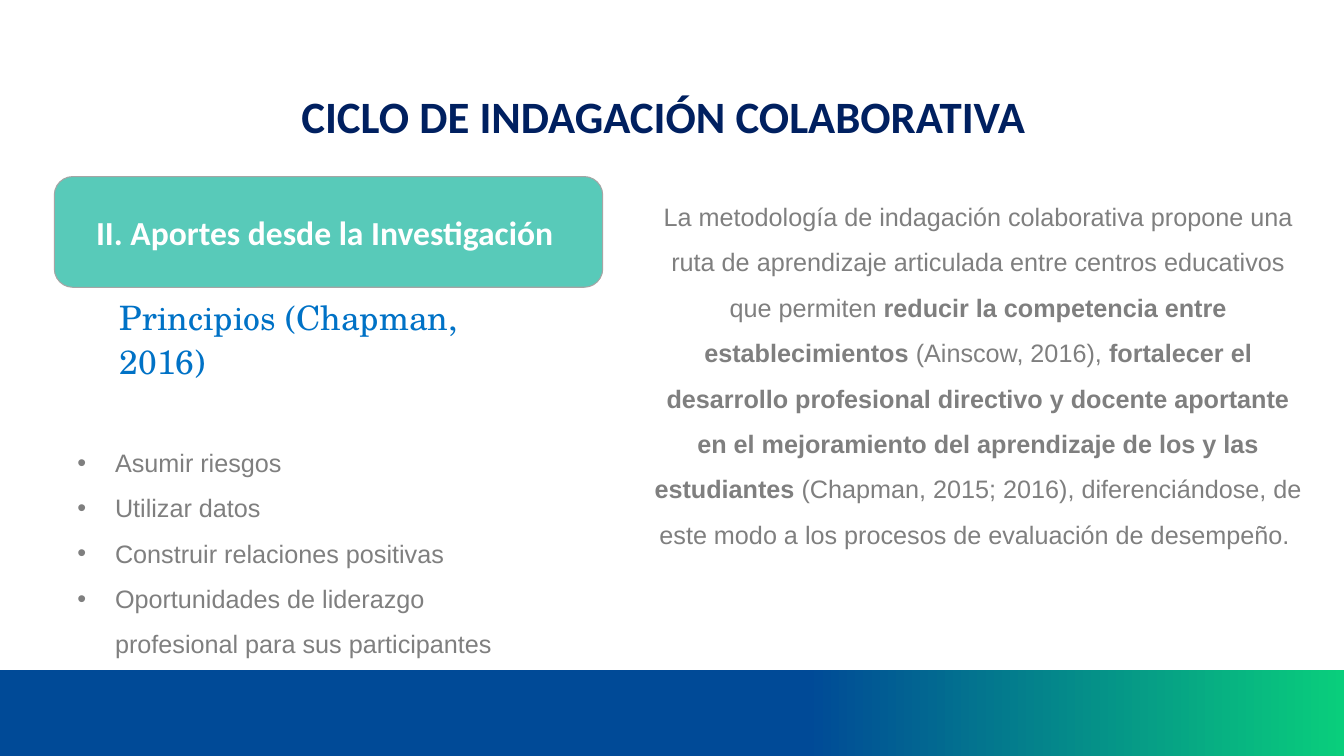
import pptx
import pptx.dml.color
import pptx.enum.shapes
import pptx.enum.text
import pptx.util
from lxml import etree
from pptx.util import Cm, Pt

COLORS = {
    "band_blue": "004A97",
    "band_green": "09CE7C",
    "banner": "58CAB9",
    "banner_line": "A5A5A5",
    "white": "FFFFFF",
    "navy": "002060",
    "sky": "0072C6",
    "gray": "7F7F7F",
}
ALIGN = pptx.enum.text.PP_ALIGN
ANCHOR = pptx.enum.text.MSO_ANCHOR
SHAPE = pptx.enum.shapes.MSO_SHAPE

TITLE_FONT = {"name": "Calibri", "size": Pt(32), "bold": True}
BANNER_FONT = {"name": "Calibri", "size": Pt(24), "bold": True}
HEADING_FONT = {"name": "TeX Gyre Schola", "size": Pt(24)}
BODY_FONT = {"name": "Arial", "size": Pt(18)}

PRINCIPLES = [
    "Asumir riesgos",
    "Utilizar datos",
    "Construir relaciones positivas",
    "Oportunidades de liderazgo profesional para sus participantes",
]
METHODOLOGY = [
    ("La metodología de indagación colaborativa propone una ruta de aprendizaje "
     "articulada entre centros educativos que permiten ", False),
    ("reducir la competencia entre establecimientos ", True),
    ("(Ainscow, 2016), ", False),
    ("fortalecer el desarrollo profesional directivo y docente aportante en el "
     "mejoramiento del aprendizaje de los y las estudiantes ", True),
    ("(Chapman, 2015; 2016), diferenciándose, de este modo a los procesos de "
     "evaluación de desempeño. ", False),
]


def rgb(color):
    return pptx.dml.color.RGBColor.from_string(COLORS[color])


def apply_format(target, values):
    for attribute, value in values.items():
        setattr(target, attribute, value)


def add_text(paragraph, text, font, color):
    run = paragraph.add_run()
    run.text = text
    apply_format(run.font, font)
    run.font.color.rgb = rgb(color)


def set_indent(paragraph, left, first=0, bullet=None):
    properties = paragraph._p.get_or_add_pPr()
    properties.set("marL", str(int(left)))
    properties.set("indent", str(int(first)))
    if bullet:
        tag = pptx.oxml.ns.qn
        etree.SubElement(properties, tag("a:buFont")).set("typeface", "Arial")
        etree.SubElement(properties, tag("a:buChar")).set("char", bullet)


def add_footer_band(slide, left, top, width, height):
    band = slide.shapes.add_shape(SHAPE.RECTANGLE, left, top, width, height)
    band.shadow.inherit = False
    band.line.fill.background()
    band.fill.gradient()
    band.fill.gradient_angle = 0
    stops = [("band_blue", 0.6), ("band_green", 1.0)]
    for stop, (color, position) in zip(band.fill.gradient_stops, stops):
        stop.color.rgb = rgb(color)
        stop.position = position


def place_title(slide, left, top, width, height):
    title = slide.shapes.title
    apply_format(title, {"left": left, "top": top, "width": width, "height": height})
    apply_format(title.text_frame, {
        "word_wrap": True,
        "vertical_anchor": ANCHOR.MIDDLE,
        "auto_size": pptx.enum.text.MSO_AUTO_SIZE.NONE,
    })
    paragraph = title.text_frame.paragraphs[0]
    paragraph.alignment = ALIGN.LEFT
    add_text(paragraph, "CICLO DE INDAGACIÓN COLABORATIVA", TITLE_FONT, "navy")


def add_banner(slide, left, top, width, height):
    banner = slide.shapes.add_shape(SHAPE.ROUNDED_RECTANGLE, left, top, width, height)
    banner.shadow.inherit = False
    banner.fill.solid()
    banner.fill.fore_color.rgb = rgb("banner")
    banner.line.color.rgb = rgb("banner_line")
    banner.line.width = Pt(0.75)
    banner.text_frame.vertical_anchor = ANCHOR.MIDDLE
    paragraph = banner.text_frame.paragraphs[0]
    paragraph.alignment = ALIGN.CENTER
    add_text(paragraph, "II. Aportes desde la Investigación ", BANNER_FONT, "white")


def add_principles(slide, left, top, width, height):
    frame = slide.shapes.add_textbox(left, top, width, height).text_frame
    apply_format(frame, {"word_wrap": True, "margin_right": Cm(2.1)})
    heading = frame.paragraphs[0]
    set_indent(heading, Cm(1.07))
    apply_format(heading, {"line_spacing": 1.1, "space_after": Pt(28)})
    add_text(heading, "Principios (Chapman, 2016)", HEADING_FONT, "sky")
    for index, principle in enumerate(PRINCIPLES):
        item = frame.add_paragraph()
        set_indent(item, Cm(0.95), -Cm(0.95), "•")
        apply_format(item, {
            "line_spacing": 1.5,
            "space_before": Pt(0 if index else 8),
            "space_after": Pt(0),
        })
        add_text(item, principle, BODY_FONT, "gray")


def add_methodology(slide, left, top, width, height):
    frame = slide.shapes.add_textbox(left, top, width, height).text_frame
    frame.word_wrap = True
    paragraph = frame.paragraphs[0]
    apply_format(paragraph, {"alignment": ALIGN.CENTER, "line_spacing": 1.5})
    for text, bold in METHODOLOGY:
        add_text(paragraph, text, {**BODY_FONT, "bold": bold}, "gray")


def main():
    presentation = pptx.Presentation()
    presentation.slide_width = Cm(33.87)
    presentation.slide_height = Cm(19.05)
    slide = presentation.slides.add_slide(presentation.slide_layouts[5])
    add_footer_band(slide, 0, Cm(16.89), presentation.slide_width, Cm(2.16))
    place_title(slide, Cm(7.34), Cm(2.11), Cm(19.18), Cm(1.63))
    add_banner(slide, Cm(1.37), Cm(4.45), Cm(13.82), Cm(2.79))
    add_principles(slide, Cm(1.7), Cm(7.26), Cm(13.46), Cm(8.31))
    add_methodology(slide, Cm(16.18), Cm(4.57), Cm(16.94), Cm(9.35))
    presentation.save("out.pptx")


if __name__ == "__main__":
    main()
